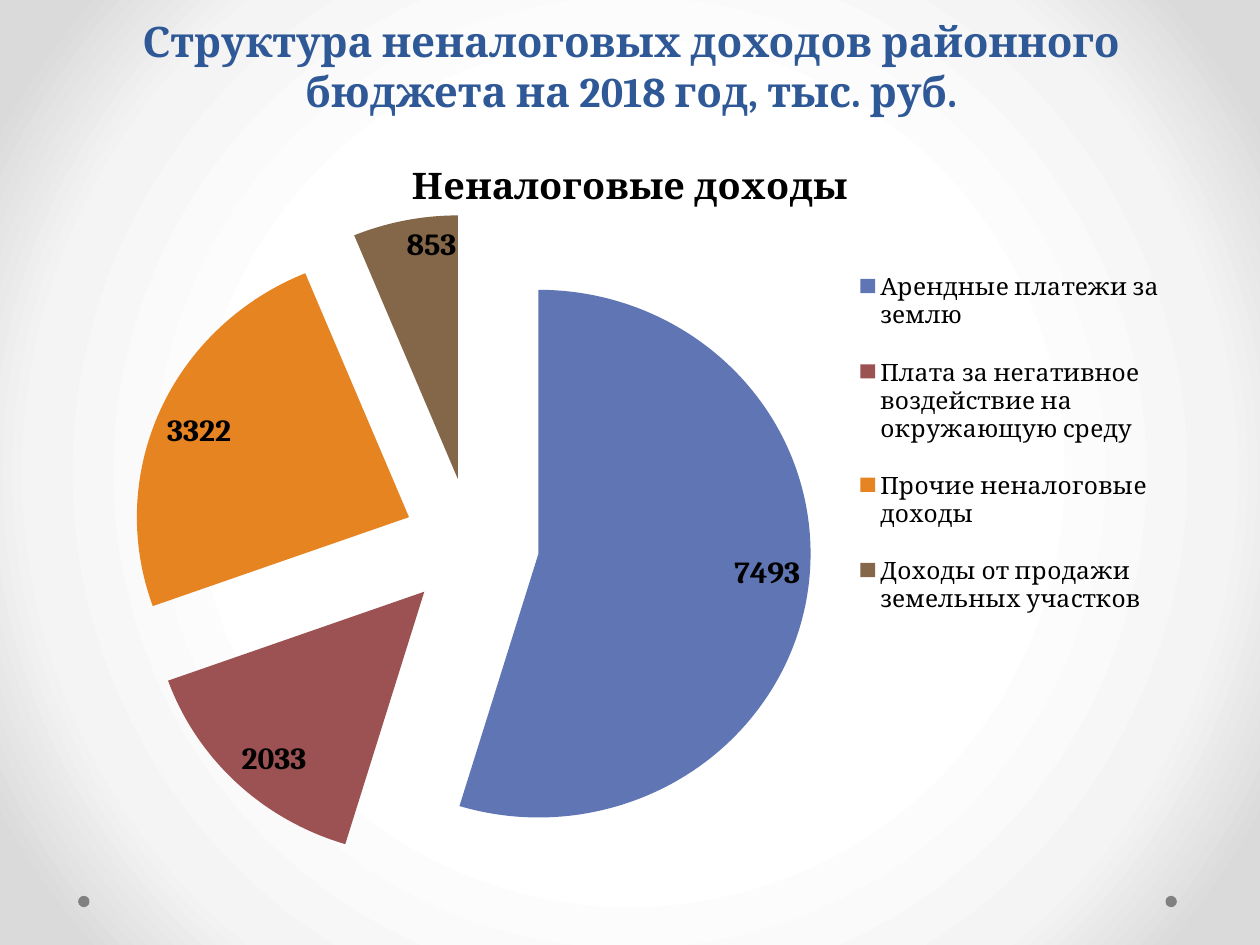
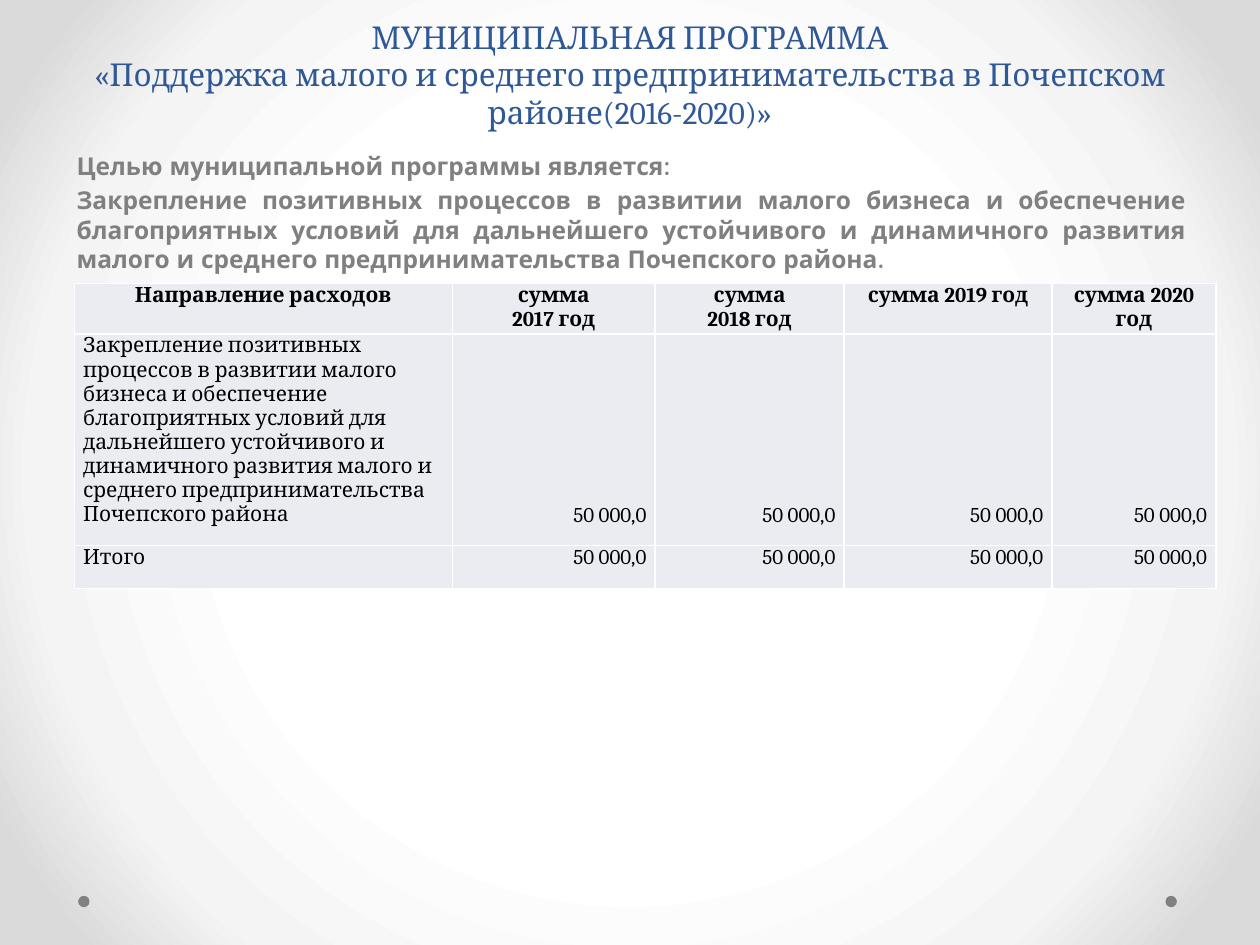
from dataclasses import dataclass

from lxml import etree
from pptx import Presentation
from pptx import util as u
from pptx.chart import data as chart_data
from pptx.dml.color import RGBColor
from pptx.enum import chart as charts
from pptx.enum import shapes, text
from pptx.oxml import ns, parse_xml

Inches, Pt = u.Inches, u.Pt
ALIGN, ANCHOR = text.PP_ALIGN, text.MSO_ANCHOR


@dataclass(frozen=True)
class Theme:
    serif: str = "Cambria"
    sans: str = "Quicksand"
    blue: str = "2F5897"
    gray: str = "808080"
    black: str = "000000"
    white: str = "FFFFFF"
    cell: str = "EAECF2"
    backdrop: tuple = ((50, "FFFFFF"), (76, "F4F4F4"), (92, "DADADA"))
    title_size: float = 24
    program_size: float = 18
    chart_title_size: float = 21.6
    label_size: float = 18
    body_size: float = 14
    table_size: float = 12


THEME = Theme()


@dataclass(frozen=True)
class Area:
    left: float
    top: float
    width: float
    height: float

    def lengths(self) -> tuple:
        return tuple(Inches(v) for v in (self.left, self.top, self.width, self.height))


@dataclass(frozen=True)
class Income:
    name: str
    amount: int
    color: str


@dataclass(frozen=True)
class Column:
    heading: str
    width: float


FOOTER_DOTS = [Area(left, 7.11, 0.09, 0.09) for left in (0.62, 9.25)]

INCOMES = [
    Income("Арендные платежи за землю", 7493, "6076B4"),
    Income("Плата за негативное воздействие на окружающую среду", 2033, "9C5252"),
    Income("Прочие неналоговые доходы", 3322, "E68422"),
    Income("Доходы от продажи земельных участков", 853, "846648"),
]

GOAL = (
    "Закрепление позитивных процессов в развитии малого бизнеса и обеспечение "
    "благоприятных условий для дальнейшего устойчивого и динамичного развития "
    "малого и среднего предпринимательства Почепского района"
)
COLUMNS = [
    Column("Направление расходов", 3),
    Column("сумма\n2017 год", 1.61),
    Column("сумма\n2018 год", 1.5),
    Column("сумма 2019 год", 1.65),
    Column("сумма 2020 год", 1.3),
]
ROW_HEIGHTS = (0.39, 1.68, 0.34)
YEARLY_SUM = "50 000,0"


def rgb(color: str) -> RGBColor:
    return RGBColor.from_string(color)


def style_font(font, size: float, color: str = THEME.black,
               bold: bool = False, face: str = THEME.serif) -> None:
    font.name, font.size, font.bold = face, Pt(size), bold
    font.color.rgb = rgb(color)


def write_text(frame, content: str, *, align=ALIGN.LEFT, before: float = 0, **font) -> None:
    """Write one paragraph for each line of the content."""
    for index, line in enumerate(content.split("\n")):
        para = frame.paragraphs[0] if index == 0 else frame.add_paragraph()
        para.alignment = align
        para.space_before = Pt(before)
        span = para.add_run()
        span.text = line
        style_font(span.font, **font)


def add_text(page, area: Area, content: str, *, anchor=ANCHOR.TOP,
             bottom: float = 0.05, **style) -> None:
    frame = page.shapes.add_textbox(*area.lengths()).text_frame
    frame.word_wrap = True
    frame.vertical_anchor = anchor
    frame.margin_bottom = Inches(bottom)
    write_text(frame, content, **style)


def add_title(page, area: Area, content: str, **style) -> None:
    add_text(page, area, content, anchor=ANCHOR.BOTTOM, align=ALIGN.CENTER,
             color=THEME.blue, **style)


def set_backdrop(master) -> None:
    """Give the master a round gradient that every page inherits."""
    master.background.fill.solid()
    holder = master.element.xpath(".//p:bgPr")[0]
    stops = "".join(
        f'<a:gs pos="{pos * 1000}"><a:srgbClr val="{color}"/></a:gs>'
        for pos, color in THEME.backdrop
    )
    gradient = parse_xml(
        f'<a:gradFill {ns.nsdecls("a")} rotWithShape="1"><a:gsLst>{stops}</a:gsLst>'
        '<a:path path="circle"><a:fillToRect l="50000" t="50000" r="50000" b="50000"/>'
        "</a:path></a:gradFill>"
    )
    holder.replace(holder[0], gradient)


def add_page(deck):
    page = deck.slides.add_slide(deck.slide_layouts[6])
    for area in FOOTER_DOTS:
        dot = page.shapes.add_shape(shapes.MSO_SHAPE.OVAL, *area.lengths())
        dot.shadow.inherit = False
        dot.fill.solid()
        dot.fill.fore_color.rgb = rgb(THEME.gray)
        dot.line.fill.background()
    return page


def set_layout(parent, area: Area, inner: bool = False) -> None:
    """Place a chart part by fractions of the chart's size."""
    for old in parent.findall(ns.qn("c:layout")):
        parent.remove(old)
    target = '<c:layoutTarget val="inner"/>' if inner else ""
    layout = parse_xml(
        f'<c:layout {ns.nsdecls("c")}><c:manualLayout>{target}'
        '<c:xMode val="edge"/><c:yMode val="edge"/>'
        f'<c:x val="{area.left}"/><c:y val="{area.top}"/>'
        f'<c:w val="{area.width}"/><c:h val="{area.height}"/>'
        "</c:manualLayout></c:layout>"
    )
    if inner:
        parent.insert(0, layout)
    else:
        parent.find(ns.qn("c:legendPos")).addnext(layout)


def add_income_pie(page, area: Area, name: str) -> None:
    values = chart_data.CategoryChartData()
    values.categories = [income.name for income in INCOMES]
    values.add_series(name, [income.amount for income in INCOMES])
    chart = page.shapes.add_chart(charts.XL_CHART_TYPE.PIE, *area.lengths(), values).chart
    style_font(chart.font, THEME.label_size)

    # Heading and legend
    chart.has_title = True
    write_text(chart.chart_title.text_frame, name, align=ALIGN.CENTER,
               size=THEME.chart_title_size, bold=True)
    chart.has_legend = True
    chart.legend.position = charts.XL_LEGEND_POSITION.RIGHT
    chart.legend.include_in_layout = False
    style_font(chart.legend.font, THEME.body_size)
    set_layout(chart.legend._element, Area(0.69, 0.16, 0.29, 0.58))

    # Slices and their values
    plot = chart.plots[0]
    plot.vary_by_categories = True
    series = plot.series[0]
    for index, income in enumerate(INCOMES):
        fill = series.points[index].format.fill
        fill.solid()
        fill.fore_color.rgb = rgb(income.color)
    for shape_style in series._element.xpath("c:dPt/c:spPr"):
        shape_style.addprevious(parse_xml(f'<c:explosion {ns.nsdecls("c")} val="25"/>'))
    plot.has_data_labels = True
    labels = plot.data_labels
    labels.show_value = True
    labels.show_percentage = False
    labels.position = charts.XL_LABEL_POSITION.INSIDE_END
    style_font(labels.font, THEME.label_size, bold=True)
    set_layout(chart._chartSpace.xpath("c:chart/c:plotArea")[0],
               Area(0.12, 0.21, 0.48, 0.77), inner=True)


def set_borders(cell, color: str, points: float) -> None:
    props = cell._tc.get_or_add_tcPr()
    for index, side in enumerate(("lnL", "lnR", "lnT", "lnB")):
        line = etree.Element(ns.qn(f"a:{side}"), w=str(Pt(points)))
        fill = etree.SubElement(line, ns.qn("a:solidFill"))
        etree.SubElement(fill, ns.qn("a:srgbClr"), val=color)
        props.insert(index, line)


def fill_cell(cell, content: str, *, anchor=ANCHOR.TOP, bottom: float = 0, **style) -> None:
    cell.margin_left = cell.margin_right = Inches(0.07)
    cell.margin_top, cell.margin_bottom = 0, Inches(bottom)
    cell.vertical_anchor = anchor
    cell.fill.solid()
    cell.fill.fore_color.rgb = rgb(THEME.cell)
    set_borders(cell, THEME.white, 1)
    write_text(cell.text_frame, content, size=THEME.table_size, **style)


def add_spending_table(page, area: Area) -> None:
    table = page.shapes.add_table(len(ROW_HEIGHTS), len(COLUMNS), *area.lengths()).table
    table.first_row = table.horz_banding = False
    for row, height in zip(table.rows, ROW_HEIGHTS):
        row.height = Inches(height)
    for index, column in enumerate(COLUMNS):
        table.columns[index].width = Inches(column.width)
        fill_cell(table.cell(0, index), column.heading, align=ALIGN.CENTER, bold=True)
        if index == 0:
            fill_cell(table.cell(1, 0), GOAL)
            fill_cell(table.cell(2, 0), "Итого")
        else:
            fill_cell(table.cell(1, index), YEARLY_SUM, align=ALIGN.RIGHT,
                      anchor=ANCHOR.BOTTOM, bottom=0.14)
            fill_cell(table.cell(2, index), YEARLY_SUM, align=ALIGN.RIGHT)


def main() -> None:
    deck = Presentation()
    deck.slide_width, deck.slide_height = Inches(10), Inches(7.5)
    set_backdrop(deck.slide_master)

    # Non-tax income
    page = add_page(deck)
    add_income_pie(page, Area(0.5, 1.07, 9, 5.63), "Неналоговые доходы")
    add_title(page, Area(0.51, 0.21, 9, 0.76),
              "Структура неналоговых доходов районного бюджета на 2018 год, тыс. руб.",
              size=THEME.title_size, bold=True)

    # Small business programme
    page = add_page(deck)
    add_title(page, Area(0.5, 0.6, 9, 0.79),
              "МУНИЦИПАЛЬНАЯ ПРОГРАММА\n«Поддержка малого и среднего "
              "предпринимательства в Почепском районе(2016-2020)»",
              size=THEME.program_size, bottom=0.35)
    add_text(page, Area(0.51, 1.15, 9, 1.13),
             f"Целью муниципальной программы является:\n{GOAL}.",
             align=ALIGN.JUSTIFY, before=2.8, size=THEME.body_size,
             color=THEME.gray, bold=True, face=THEME.sans)
    add_spending_table(page, Area(0.59, 2.25, 9.06, sum(ROW_HEIGHTS)))

    deck.save("out.pptx")


if __name__ == "__main__":
    main()
